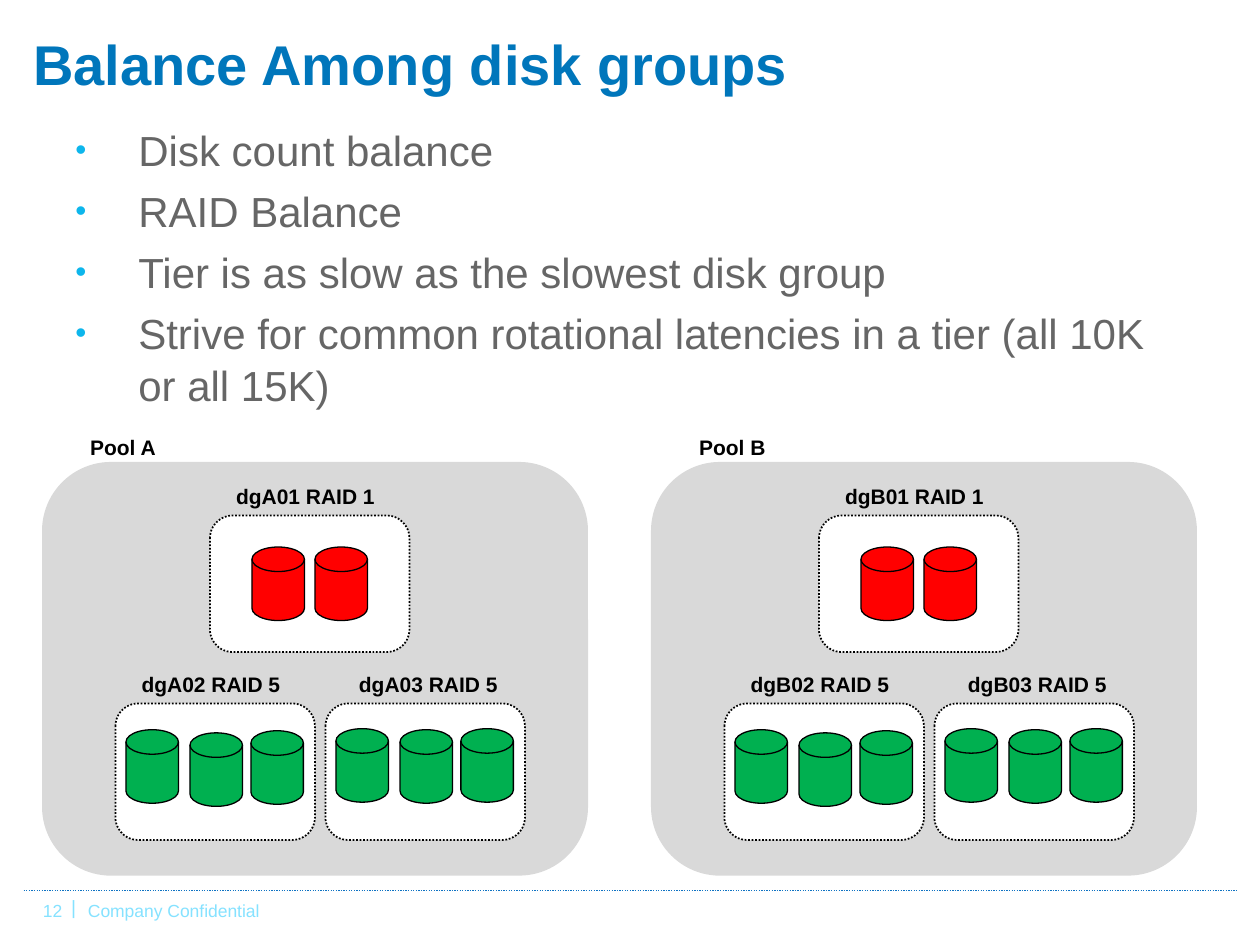
from dataclasses import dataclass

from lxml.etree import SubElement
from pptx import Presentation
from pptx.dml.color import RGBColor
from pptx.enum.dml import MSO_LINE
from pptx.enum.shapes import MSO_CONNECTOR, MSO_SHAPE
from pptx.enum.text import MSO_ANCHOR
from pptx.oxml.ns import qn
from pptx.util import Inches, Pt


@dataclass(frozen=True)
class Theme:
    font: str = "Arial"
    title: str = "0076BB"
    body: str = "666666"
    bullet: str = "0DB6EC"
    footer: str = "85E2FF"
    rule: str = "0F73C3"
    pool: str = "D9D9D9"
    frame: str = "FFFFFF"
    ink: str = "000000"
    mirror_disk: str = "FF0000"
    parity_disk: str = "00B050"
    title_size: float = 32
    body_size: float = 24
    label_size: float = 12
    footer_size: float = 10
    divider_size: float = 11


THEME = Theme()
SLIDE_WIDTH, SLIDE_HEIGHT = Inches(10), Inches(7.5)
COLUMNS, ROWS = 120, 90

BULLETS = [
    "Disk count balance",
    "RAID Balance",
    "Tier is as slow as the slowest disk group",
    "Strive for common rotational latencies in a tier (all 10K or all 15K)",
]
POOL_COLUMNS = {"A": 4, "B": 62}
POOL_ROW = 44
# number, RAID level, offset in the pool, label indent, disk colour, disk offsets
DISK_GROUPS = [
    ("02", 5, (7, 23), 1.3, THEME.parity_disk, [(1, 2.5), (12.9, 2.6), (7.1, 2.8)]),
    ("03", 5, (27, 23), 2, THEME.parity_disk, [(1, 2.4), (12.9, 2.4), (7.1, 2.5)]),
    ("01", 1, (16, 5.1), 1.3, THEME.mirror_disk, [(4, 3), (10, 3)]),
]


def grid(column, row):
    return round(SLIDE_WIDTH * column / COLUMNS), round(SLIDE_HEIGHT * row / ROWS)


def color(value):
    return RGBColor.from_string(value)


def style(paragraph, size, ink, bold=False):
    font = paragraph.font
    font.name, font.size, font.bold = THEME.font, Pt(size), bold
    font.color.rgb = color(ink)


def add_text(shapes, at, extent, text, size, ink, bold=False):
    box = shapes.add_textbox(*grid(*at), *grid(*extent))
    box.text_frame.word_wrap = True
    para = box.text_frame.paragraphs[0]
    para.text = text
    style(para, size, ink, bold)
    return box


def add_label(shapes, at, text):
    add_text(shapes, at, (16.4, 3.6), text, THEME.label_size, THEME.ink, True)


def add_shape(shapes, kind, at, extent, fill, line_width=0):
    shape = shapes.add_shape(kind, *grid(*at), *grid(*extent))
    shape.shadow.inherit = False
    shape.fill.solid()
    shape.fill.fore_color.rgb = color(fill)
    if line_width:
        shape.line.color.rgb = color(THEME.ink)
        shape.line.width = Pt(line_width)
    else:
        shape.line.fill.background()
    return shape


def add_bullet(paragraph):
    """Give the paragraph a hanging, coloured bullet at three quarters of the text size."""
    properties = paragraph._p.get_or_add_pPr()
    properties.set("marL", str(Inches(0.5)))
    properties.set("indent", str(Inches(-0.5)))
    bullet_color = SubElement(properties, qn("a:buClr"))
    SubElement(bullet_color, qn("a:srgbClr"), val=THEME.bullet)
    SubElement(properties, qn("a:buSzPct"), val="75000")
    SubElement(properties, qn("a:buFont"), typeface=THEME.font)
    SubElement(properties, qn("a:buChar"), char="•")


def add_bullets(page):
    box = page.shapes.add_textbox(*grid(6, 11.1), *grid(108, 59.4))
    frame = box.text_frame
    frame.word_wrap = True
    for index, text in enumerate(BULLETS):
        para = frame.paragraphs[0] if index == 0 else frame.add_paragraph()
        para.text = text
        add_bullet(para)
        para.line_spacing = 1.04
        para.space_before = Pt(0.2 * THEME.body_size if index else 0)
        style(para, THEME.body_size, THEME.body)


def add_disk_group(shapes, at, label, label_indent, disk_color, disks):
    column, row = at
    frame = add_shape(shapes, MSO_SHAPE.ROUNDED_RECTANGLE, at, (19, 13), THEME.frame, 1)
    frame.line.dash_style = MSO_LINE.ROUND_DOT
    for across, down in disks:
        add_shape(shapes, MSO_SHAPE.FLOWCHART_MAGNETIC_DISK,
                  (column + across, row + down), (5, 7), disk_color, 0.75)
    add_label(shapes, (column + label_indent, row - 3.65), label)


def add_pool(page, name, column):
    shapes = page.shapes.add_group_shape().shapes
    add_shape(shapes, MSO_SHAPE.ROUNDED_RECTANGLE, (column, POOL_ROW), (52, 39.4), THEME.pool)
    for number, level, (across, down), indent, disk_color, disks in DISK_GROUPS:
        add_disk_group(shapes, (column + across, POOL_ROW + down),
                       f"dg{name}{number} RAID {level}", indent, disk_color, disks)
    add_label(shapes, (column + 3.4, POOL_ROW - 3.2), f"Pool {name}")


def add_footer(page):
    rule = page.shapes.add_connector(MSO_CONNECTOR.STRAIGHT, *grid(2.25, 84.8), *grid(117.75, 84.8))
    rule.line.color.rgb = color(THEME.rule)
    rule.line.width = Pt(0.75)
    rule.line.dash_style = MSO_LINE.ROUND_DOT
    SubElement(rule._element.spPr, qn("a:effectLst"))
    for at, extent, text, size in [
        ((2.9, 85.1), (6.1, 3.2), "12", THEME.footer_size),
        ((7.2, 85.1), (60, 5.6), "Company Confidential", THEME.footer_size),
        ((5.6, 84.7), (2.3, 3.2), "|", THEME.divider_size),
    ]:
        box = add_text(page.shapes, at, extent, text, size, THEME.footer)
        box.text_frame.margin_right = 0


def add_title(page):
    box = add_text(page.shapes, (2, 2), (89.6, 7.7), "Balance Among disk groups",
                   THEME.title_size, THEME.title, True)
    box.text_frame.vertical_anchor = MSO_ANCHOR.BOTTOM
    box.text_frame.margin_bottom = Inches(0.04)


def main():
    deck = Presentation()
    deck.slide_width, deck.slide_height = SLIDE_WIDTH, SLIDE_HEIGHT
    page = deck.slides.add_slide(deck.slide_layouts[6])
    add_footer(page)
    add_title(page)
    add_bullets(page)
    for name, column in POOL_COLUMNS.items():
        add_pool(page, name, column)
    deck.save("out.pptx")


if __name__ == "__main__":
    main()
